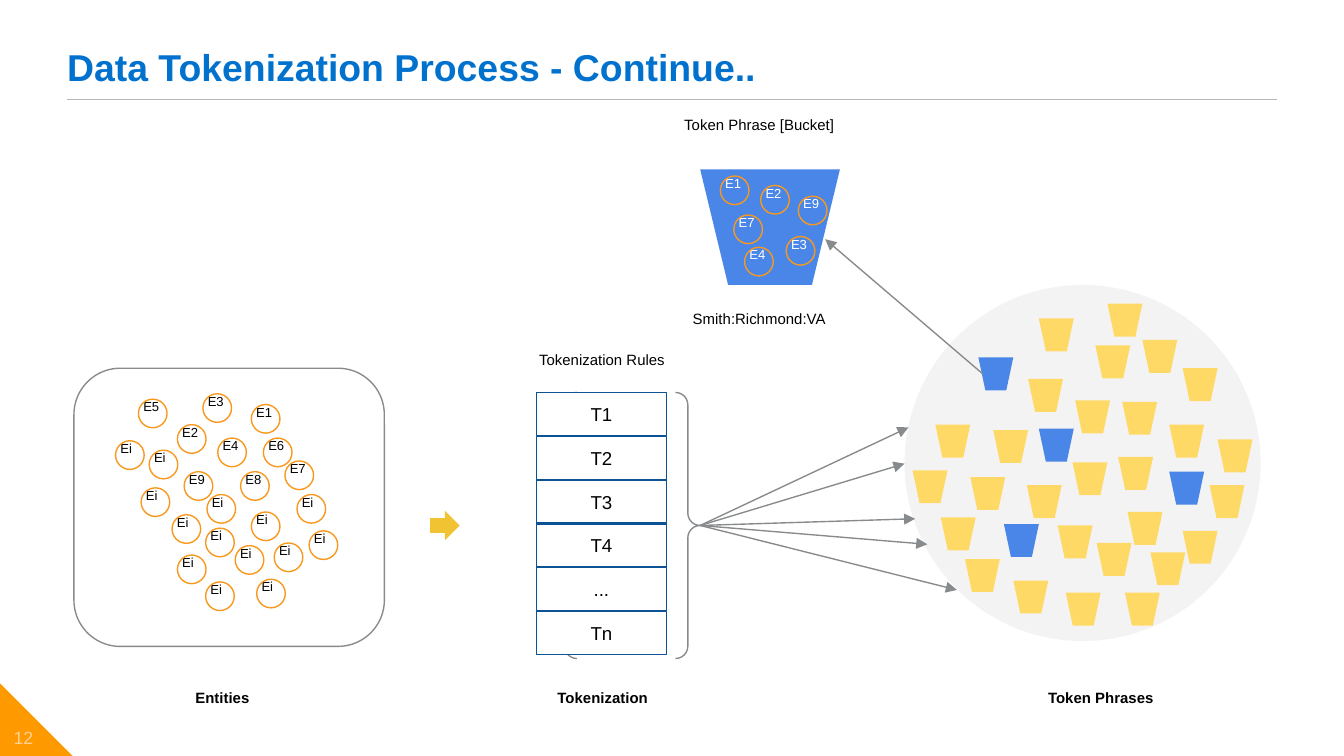
from dataclasses import dataclass
from typing import Any, NamedTuple, Optional

from lxml import etree
from pptx import Presentation
from pptx.dml.color import RGBColor
from pptx.enum.shapes import MSO_CONNECTOR, MSO_SHAPE
from pptx.enum.text import MSO_ANCHOR, PP_ALIGN
from pptx.oxml.ns import qn
from pptx.util import Emu, Inches, Pt

CIRCLE, RECTANGLE, ROUNDED = MSO_SHAPE.OVAL, MSO_SHAPE.RECTANGLE, MSO_SHAPE.ROUNDED_RECTANGLE
BUCKET, BRACE = MSO_SHAPE.FLOWCHART_MANUAL_OPERATION, MSO_SHAPE.DOUBLE_BRACE
CORNER, BLOCK_ARROW = MSO_SHAPE.RIGHT_TRIANGLE, MSO_SHAPE.RIGHT_ARROW
STRAIGHT = MSO_CONNECTOR.STRAIGHT
LEFT, CENTER = PP_ALIGN.LEFT, PP_ALIGN.CENTER
TOP, MIDDLE, BOTTOM = MSO_ANCHOR.TOP, MSO_ANCHOR.MIDDLE, MSO_ANCHOR.BOTTOM
RIGHT_SIDE = 3

# The slide is a grid of square cells, 100 columns by 56.25 rows
COLUMNS, ROWS = 100, 56.25
CELL = Inches(0.1)


@dataclass(frozen=True)
class Theme:
    font: str = "Arial"
    title: str = "0072CE"
    text: str = "000000"
    white: str = "FFFFFF"
    corner: str = "FF9900"
    number: str = "FFD092"
    rule: str = "B7B8B9"
    gray: str = "888B8D"
    entity: str = "F8981D"
    chosen: str = "4A86E8"
    bucket: str = "FFD966"
    backdrop: str = "F3F3F3"
    table: str = "0B5394"
    arrow: str = "F1C232"
    title_size: float = 20
    rule_size: float = 10
    number_size: float = 9.5
    label_size: float = 8
    entity_size: float = 7
    line_width: float = 0.75


THEME = Theme()


class Area(NamedTuple):
    column: float
    row: float
    columns: float
    rows: float


@dataclass(frozen=True)
class Style:
    size: float
    color: str = THEME.text
    bold: bool = False
    align: Any = CENTER
    anchor: Any = TOP
    inset: float = 1
    spacing: float = 1.0


class Entity(NamedTuple):
    name: str
    column: float
    row: float


def cells(count: float) -> Emu:
    return Emu(round(count * CELL))


def write(shape: Any, words: str, style: Style) -> None:
    frame = shape.text_frame
    inset = cells(style.inset)
    frame_format = dict(word_wrap=True, vertical_anchor=style.anchor, margin_left=inset,
                        margin_top=inset, margin_right=inset, margin_bottom=inset)
    para = frame.paragraphs[0]
    para_format = dict(alignment=style.align, line_spacing=style.spacing)
    span = para.add_run()
    span.text = words
    font_format = dict(name=THEME.font, size=Pt(style.size), bold=style.bold)
    for target, values in ((frame, frame_format), (para, para_format), (span.font, font_format)):
        for name, value in values.items():
            setattr(target, name, value)
    span.font.color.rgb = RGBColor.from_string(style.color)


def draw_text(shapes: Any, area: Area, words: str, style: Style) -> None:
    write(shapes.add_textbox(*map(cells, area)), words, style)


def draw_shape(shapes: Any, kind: Any, area: Area, fill: Optional[str] = None,
               line: Optional[str] = None) -> Any:
    shape = shapes.add_shape(kind, *map(cells, area))
    shape.shadow.inherit = False
    if fill:
        shape.fill.solid()
        shape.fill.fore_color.rgb = RGBColor.from_string(fill)
    else:
        shape.fill.background()
    if line:
        shape.line.color.rgb = RGBColor.from_string(line)
        shape.line.width = Pt(THEME.line_width)
    else:
        shape.line.fill.background()
    return shape


def draw_line(shapes: Any, start: tuple[float, float], end: tuple[float, float],
              color: str, arrow: bool = False) -> Any:
    line = shapes.add_connector(STRAIGHT, *map(cells, start + end))
    line.line.color.rgb = RGBColor.from_string(color)
    line.line.width = Pt(THEME.line_width)
    if arrow:
        etree.SubElement(line.line._get_or_add_ln(), qn("a:tailEnd"), type="triangle")
    etree.SubElement(line._element.spPr, qn("a:effectLst"))
    return line


def draw_entity(shapes: Any, entity: Entity, color: str) -> None:
    """A circle whose label box starts a little above and left of it."""
    label = Area(entity.column - 0.62, entity.row - 0.62, 3.7, 3.2)
    draw_text(shapes, label, entity.name, Style(THEME.entity_size, color, align=LEFT))
    draw_shape(shapes, CIRCLE, Area(entity.column, entity.row, 2.13, 2.13), line=THEME.entity)


ENTITIES = [Entity(*item) for item in (
    ("E5", 10.3, 29.7), ("E2", 13.2, 31.6), ("E3", 15.1, 29.3), ("E4", 16.2, 32.6),
    ("E1", 18.7, 30.1), ("E6", 19.6, 32.6), ("E7", 21.2, 34.3), ("E8", 17.9, 35.1),
    ("E9", 13.7, 35.1))]
ENTITIES += [Entity("Ei", *place) for place in (
    (15.4, 36.8), (15.3, 39.3), (18.7, 38.1), (17.5, 40.6), (22.1, 36.8), (10.5, 36.3),
    (11.1, 33.5), (8.6, 32.8), (12.8, 38.3), (13.2, 41.3), (20.4, 40.4), (19.1, 43.1),
    (23, 39.5), (15.3, 43.3))]
BUCKET_ENTITIES = [Entity(*item) for item in (
    ("E1", 53.6, 13.1), ("E9", 59.4, 14.6), ("E4", 55.4, 18.4),
    ("E7", 54.6, 16), ("E3", 58.5, 17.6), ("E2", 56.6, 13.8))]
CHOSEN_PLACES = ((72.8, 26.6), (77.3, 31.9), (74.7, 39), (87, 35.1))
BUCKET_PLACES = (
    (76.5, 28.2), (80, 29.8), (83.2, 34), (76.4, 36.1), (81.5, 25.7), (77.3, 23.7),
    (72.2, 35.5), (73.9, 32), (69.6, 31.6), (78.7, 39.1), (75.4, 43.2), (70, 38.5),
    (83.9, 38.1), (79.8, 34.4), (82.4, 22.6), (83.5, 29.9), (85.6, 41.1), (87, 31.6),
    (90.6, 32.7), (88, 27.4), (67.9, 35), (81.6, 40.4), (79.3, 44.1), (71.8, 41.6),
    (83.7, 44.1), (88, 39.5), (90, 36.1), (85, 25.3))
RULES = ("T1", "T2", "T3", "T4", "...", "Tn")
RULE_PITCH = 3.26
ARROW_ENDS = ((67.6, 31.8), (67.3, 34.5), (68.1, 38.6), (69, 40.5), (71.2, 43.9))
PLAIN = Style(THEME.label_size)
BOLD = Style(THEME.label_size, bold=True)
LABELS = (
    (Area(11.7, 50.6, 9.7, 3.4), "Entities", BOLD),
    (Area(40, 50.6, 9.7, 3.4), "Tokenization", BOLD),
    (Area(77, 50.6, 11.7, 3.4), "Token Phrases", Style(THEME.label_size, bold=True, align=LEFT)),
    (Area(49.3, 7.9, 14.4, 3.4), "Token Phrase [Bucket]", PLAIN),
    (Area(37.6, 25.4, 14.4, 3.4), "Tokenization Rules", PLAIN),
    (Area(49.3, 22.4, 14.4, 3.4), "Smith:Richmond:VA", PLAIN))


def main() -> None:
    deck = Presentation()
    deck.slide_width, deck.slide_height = cells(COLUMNS), cells(ROWS)
    shapes = deck.slides.add_slide(deck.slide_layouts[6]).shapes

    # Title, rule and page number
    draw_shape(shapes, CORNER, Area(0, ROWS - 5.4, 5.4, 5.4), THEME.corner)
    draw_line(shapes, (5, 7.4), (95, 7.4), THEME.rule)
    draw_text(shapes, Area(-0.5, 53.5, 4.5, 3), "12", Style(
        THEME.number_size, THEME.number, anchor=MIDDLE, inset=0, spacing=0.9))
    draw_text(shapes, Area(5, 1.1, 90, 5.6), "Data Tokenization Process - Continue..", Style(
        THEME.title_size, THEME.title, True, LEFT, BOTTOM, 0, 0.9))

    # Entities
    draw_shape(shapes, ROUNDED, Area(5.5, 27.4, 23.1, 20.7), line=THEME.gray)
    for entity in ENTITIES:
        draw_entity(shapes.add_group_shape().shapes, entity, THEME.text)
    draw_shape(shapes, BLOCK_ARROW, Area(32, 38, 2.2, 2.2), THEME.arrow)

    # Enlarged bucket
    bucket = shapes.add_group_shape().shapes
    draw_shape(bucket, BUCKET, Area(52.1, 12.6, 10.4, 8.6), THEME.chosen)
    for entity in BUCKET_ENTITIES:
        draw_entity(bucket, entity, THEME.white)

    # Token phrases
    draw_shape(shapes, CIRCLE, Area(67.3, 21.2, 26.5, 26.5), THEME.backdrop)
    for places, color in ((BUCKET_PLACES, THEME.bucket), (CHOSEN_PLACES, THEME.chosen)):
        for place in places:
            draw_shape(shapes, BUCKET, Area(*place, 2.6, 2.45), color)
    draw_line(shapes, (73.1, 27.8), (61.4, 17.8), THEME.gray, arrow=True)

    # Tokenization rules, with arrows from the brace to the token phrases
    brace = draw_shape(shapes, BRACE, Area(41.1, 29.2, 11, 19.8), line=THEME.gray)
    for index, rule in enumerate(RULES):
        area = Area(39.9, 29.2 + index * RULE_PITCH, 9.7, 3.2)
        box = draw_shape(shapes, RECTANGLE, area, THEME.white, THEME.table)
        write(box, rule, Style(THEME.rule_size, anchor=MIDDLE))
    for end in ARROW_ENDS:
        arrow = draw_line(shapes, (52.1, 39.1), end, THEME.gray, arrow=True)
        arrow.begin_connect(brace, RIGHT_SIDE)

    # Labels
    for area, words, style in LABELS:
        draw_text(shapes, area, words, style)

    deck.save("out.pptx")


if __name__ == "__main__":
    main()
